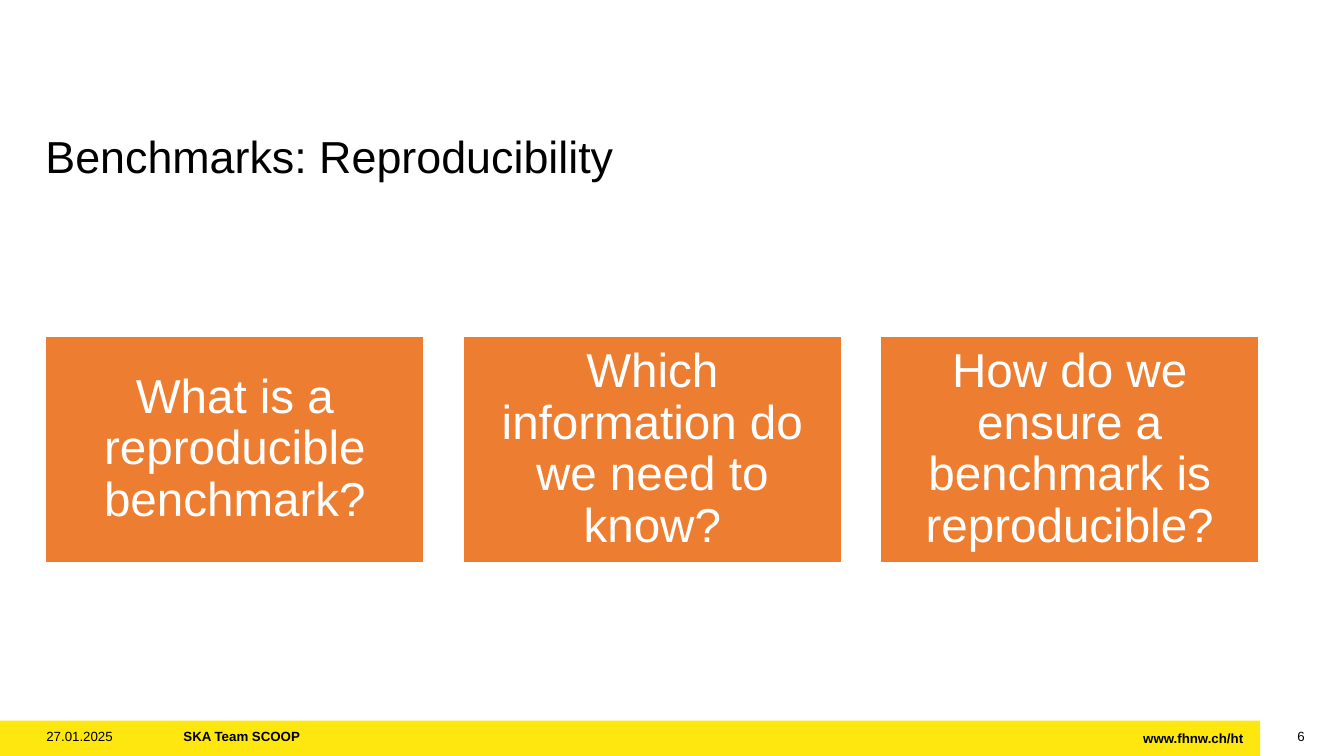
from dataclasses import dataclass

from pptx import Presentation
from pptx.dml.color import RGBColor
from pptx.enum.shapes import MSO_SHAPE as Preset
from pptx.enum.text import MSO_ANCHOR as Anchor, PP_ALIGN as Align
from pptx.util import Inches, Pt

# The grid has 100 columns and 100 rows
WIDTH, HEIGHT = 13.33, 7.5
COLUMN, ROW = WIDTH / 100, HEIGHT / 100
MARGIN = 3.38
CONTENT_WIDTH = 90.32
CARD_GAP = 2.85
FOOTER_ROW, FOOTER_HEIGHT = 96.53, 2.13

BLACK, WHITE, YELLOW, ORANGE = "000000", "FFFFFF", "FDE70E", "ED7D31"
QUESTIONS = (
    "What is a reproducible benchmark?",
    "Which information do we need to know?",
    "How do we ensure a benchmark is reproducible?",
)


@dataclass(frozen=True)
class Area:
    column: float
    row: float
    columns: float
    rows: float

    def lengths(self) -> tuple:
        return (Inches(self.column * COLUMN), Inches(self.row * ROW),
                Inches(self.columns * COLUMN), Inches(self.rows * ROW))


@dataclass(frozen=True)
class Label:
    text: str
    area: Area
    size: float = 9.5
    bold: bool = False
    align: Align = Align.LEFT
    spacing: float = 0.9


def color(value: str) -> RGBColor:
    return RGBColor.from_string(value)


def set_values(target, values: dict) -> None:
    for name, value in values.items():
        setattr(target, name, value)


def write(shape, text: str, size: float, ink: str, align: Align, spacing: float,
          bold: bool = False, inset: float = 0, anchor: Anchor = Anchor.TOP) -> None:
    frame = shape.text_frame
    margins = {f"margin_{side}": Inches(inset) for side in ("left", "top", "right", "bottom")}
    set_values(frame, {"word_wrap": True, "vertical_anchor": anchor, **margins})
    paragraph = frame.paragraphs[0]
    set_values(paragraph, {"text": text, "alignment": align, "line_spacing": spacing})
    font = paragraph.runs[0].font
    set_values(font, {"name": "Arial", "size": Pt(size), "bold": bold})
    font.color.rgb = color(ink)


def add_rectangle(slide, area: Area, fill: str):
    shape = slide.shapes.add_shape(Preset.RECTANGLE, *area.lengths())
    shape.shadow.inherit = False
    shape.fill.solid()
    shape.fill.fore_color.rgb = color(fill)
    shape.line.fill.background()
    return shape


def add_label(slide, label: Label) -> None:
    box = slide.shapes.add_textbox(*label.area.lengths())
    write(box, label.text, label.size, BLACK, label.align, label.spacing, label.bold)


def add_card(slide, question: str, area: Area) -> None:
    card = add_rectangle(slide, area, ORANGE)
    card.line.color.rgb = color(WHITE)
    card.line.width = Pt(1.5)
    write(card, question, 34, WHITE, Align.CENTER, 0.9, inset=0.14, anchor=Anchor.MIDDLE)


def footer_area(column: float, columns: float) -> Area:
    return Area(column, FOOTER_ROW, columns, FOOTER_HEIGHT)


def main() -> None:
    presentation = Presentation()
    set_values(presentation, {"slide_width": Inches(WIDTH), "slide_height": Inches(HEIGHT)})
    slide = presentation.slides.add_slide(presentation.slide_layouts[6])

    # Footer band
    add_rectangle(slide, Area(0, 95.33, 93.77, 4.67), YELLOW)

    # Title and footer texts
    labels = (
        Label("Benchmarks: Reproducibility", Area(MARGIN, 17.07, CONTENT_WIDTH, 7.2),
              size=32, spacing=1),
        Label("27.01.2025", footer_area(3.45, 9.75)),
        Label("SKA Team SCOOP", footer_area(13.65, 66.47), bold=True),
        Label("www.fhnw.ch/ht", footer_area(80.27, 12.23), bold=True,
              align=Align.RIGHT, spacing=1),
        Label("6", footer_area(94, 3.08), align=Align.RIGHT),
    )
    for label in labels:
        add_label(slide, label)

    # Question cards share the content width
    count = len(QUESTIONS)
    card_width = (CONTENT_WIDTH - (count - 1) * CARD_GAP) / count
    for index, question in enumerate(QUESTIONS):
        column = MARGIN + index * (card_width + CARD_GAP)
        add_card(slide, question, Area(column, 44.4, card_width, 30.13))

    presentation.save("out.pptx")


if __name__ == "__main__":
    main()
